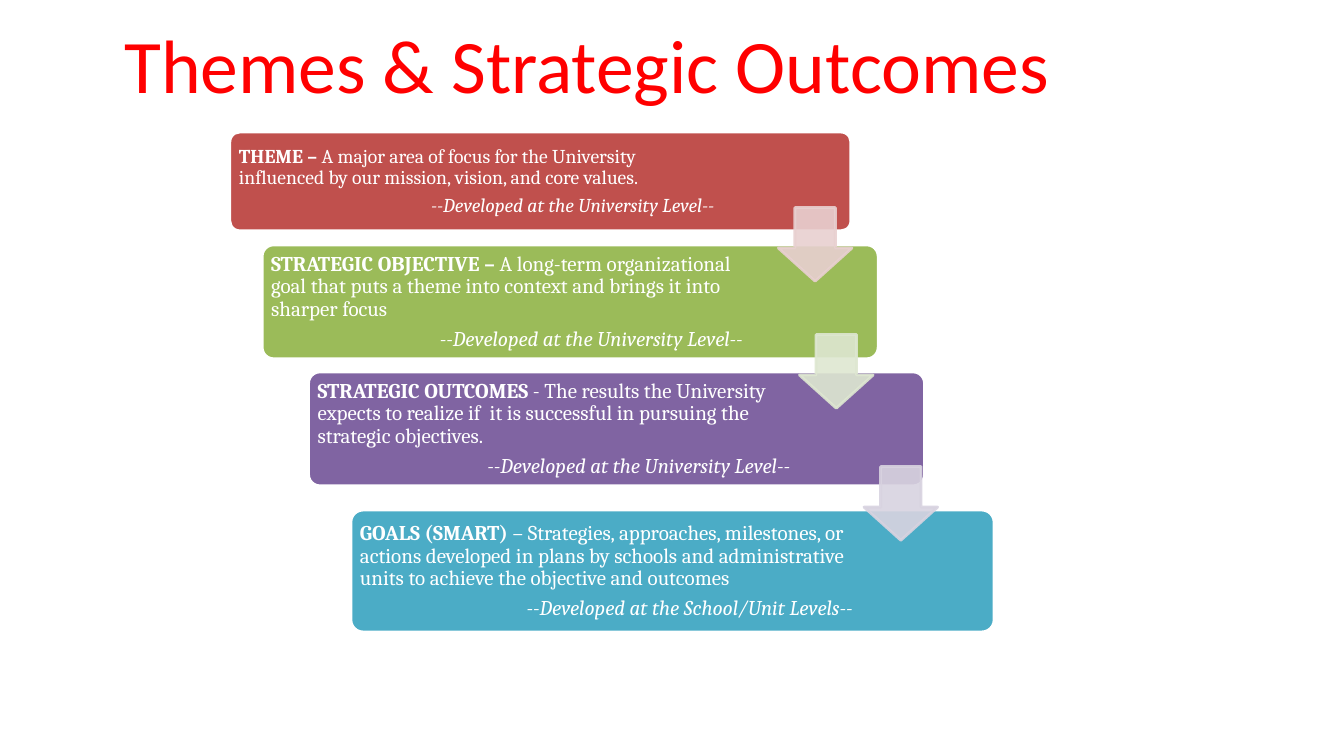
from dataclasses import dataclass

from lxml.etree import SubElement
from pptx import Presentation
from pptx.dml.color import RGBColor
from pptx.enum.shapes import MSO_SHAPE
from pptx.enum.text import MSO_ANCHOR, MSO_AUTO_SIZE, PP_ALIGN
from pptx.oxml.ns import qn
from pptx.util import Pt

PX = 9144  # EMU per px, 100 px to the inch


@dataclass(frozen=True)
class Theme:
    title_font: str = "Calibri"
    body_font: str = "Cambria"
    title_size: int = 54
    title_color: str = "FF0000"
    white: str = "FFFFFF"
    outline: int = 2
    arrow_opacity: int = 90


THEME = Theme()
UNIVERSITY = "--Developed at the University Level--"

# box, fill, text width, type size, heading, description, developer
CARDS = [
    ((228, 131, 616, 98), "C0504D", 484, 14, "THEME – ",
     "A major area of focus for the University influenced by our mission, vision, and core values.",
     UNIVERSITY),
    ((260, 243, 611, 113), "9BBB59", 480, 15, "STRATEGIC OBJECTIVE – ",
     "A long-term organizational goal that puts a theme into context and brings it into sharper focus",
     UNIVERSITY),
    ((306, 369, 611, 113), "8064A2", 481, 15, "STRATEGIC OUTCOMES",
     " - The results the University expects to realize if  it is successful in pursuing the "
     "strategic objectives.",
     UNIVERSITY),
    ((348, 506, 638, 121), "4BACC6", 501, 15, "GOALS (SMART) ",
     "– Strategies, approaches, milestones, or actions developed in plans by schools and "
     "administrative units to achieve the objective and outcomes",
     "--Developed at the School/Unit Levels--"),
]
ARROWS = [((772, 206), "E8D0D0"), ((793, 332), "DEE7D1"), ((857, 463), "D8D3E0")]
ARROW_SIZE = 73


def emu(*lengths):
    return [length * PX for length in lengths]


def set_all(target, values):
    for name, value in values.items():
        setattr(target, name, value)


def add_span(para, text, color, **font):
    span = para.add_run()
    span.text = text
    set_all(span.font, font)
    span.font.color.rgb = RGBColor.from_string(color)


def add_block(page, kind, box, adjustments, fill, line):
    block = page.shapes.add_shape(kind, *emu(*box))
    block.shadow.inherit = False
    for index, value in enumerate(adjustments):
        block.adjustments[index] = value
    block.fill.solid()
    block.fill.fore_color.rgb = RGBColor.from_string(fill)
    block.line.color.rgb = RGBColor.from_string(line)
    block.line.width = Pt(THEME.outline)
    return block


def add_title(page, box, text):
    title = page.shapes.title
    set_all(title, dict(zip(("left", "top", "width", "height"), emu(*box))))
    set_all(title.text_frame, {"auto_size": MSO_AUTO_SIZE.NONE, "word_wrap": True,
                               "vertical_anchor": MSO_ANCHOR.BOTTOM})
    para = title.text_frame.paragraphs[0]
    set_all(para, {"alignment": PP_ALIGN.CENTER, "line_spacing": 0.9})
    add_span(para, text, THEME.title_color, name=THEME.title_font, size=Pt(THEME.title_size))


def add_card(page, box, fill, text_width, size, heading, description, developer):
    add_block(page, MSO_SHAPE.ROUNDED_RECTANGLE, box, [0.1], fill, THEME.white)
    left, top, _, height = box
    label = page.shapes.add_textbox(*emu(left + 3, top + 3, text_width, height - 6))
    frame = label.text_frame
    set_all(frame, {"word_wrap": True, "vertical_anchor": MSO_ANCHOR.MIDDLE})
    set_all(frame, {f"margin_{side}": 6 * PX for side in ("left", "top", "right", "bottom")})
    font = {"name": THEME.body_font, "size": Pt(size)}

    para = frame.paragraphs[0]
    add_span(para, heading, THEME.white, bold=True, **font)
    add_span(para, description, THEME.white, **font)
    closing = frame.add_paragraph()
    add_span(closing, developer, THEME.white, italic=True, **font)
    for each, alignment in ((para, PP_ALIGN.LEFT), (closing, PP_ALIGN.RIGHT)):
        set_all(each, {"alignment": alignment, "line_spacing": 0.9, "space_after": Pt(5)})


def add_arrow(page, corner, color):
    box = (*corner, ARROW_SIZE, ARROW_SIZE)
    arrow = add_block(page, MSO_SHAPE.DOWN_ARROW, box, [0.55, 0.45], color, color)
    properties = arrow.fill._xPr
    for shade in properties.iter(qn("a:srgbClr")):
        SubElement(shade, qn("a:alpha"), val=str(THEME.arrow_opacity * 1000))


def main():
    deck = Presentation()
    set_all(deck, {"slide_width": 1333 * PX, "slide_height": 750 * PX})
    page = deck.slides.add_slide(deck.slide_layouts.get_by_name("Title Only"))
    add_title(page, (82, 34, 1000, 80), "Themes & Strategic Outcomes")
    for card in CARDS:
        add_card(page, *card)
    for arrow in ARROWS:
        add_arrow(page, *arrow)
    deck.save("out.pptx")


if __name__ == "__main__":
    main()
